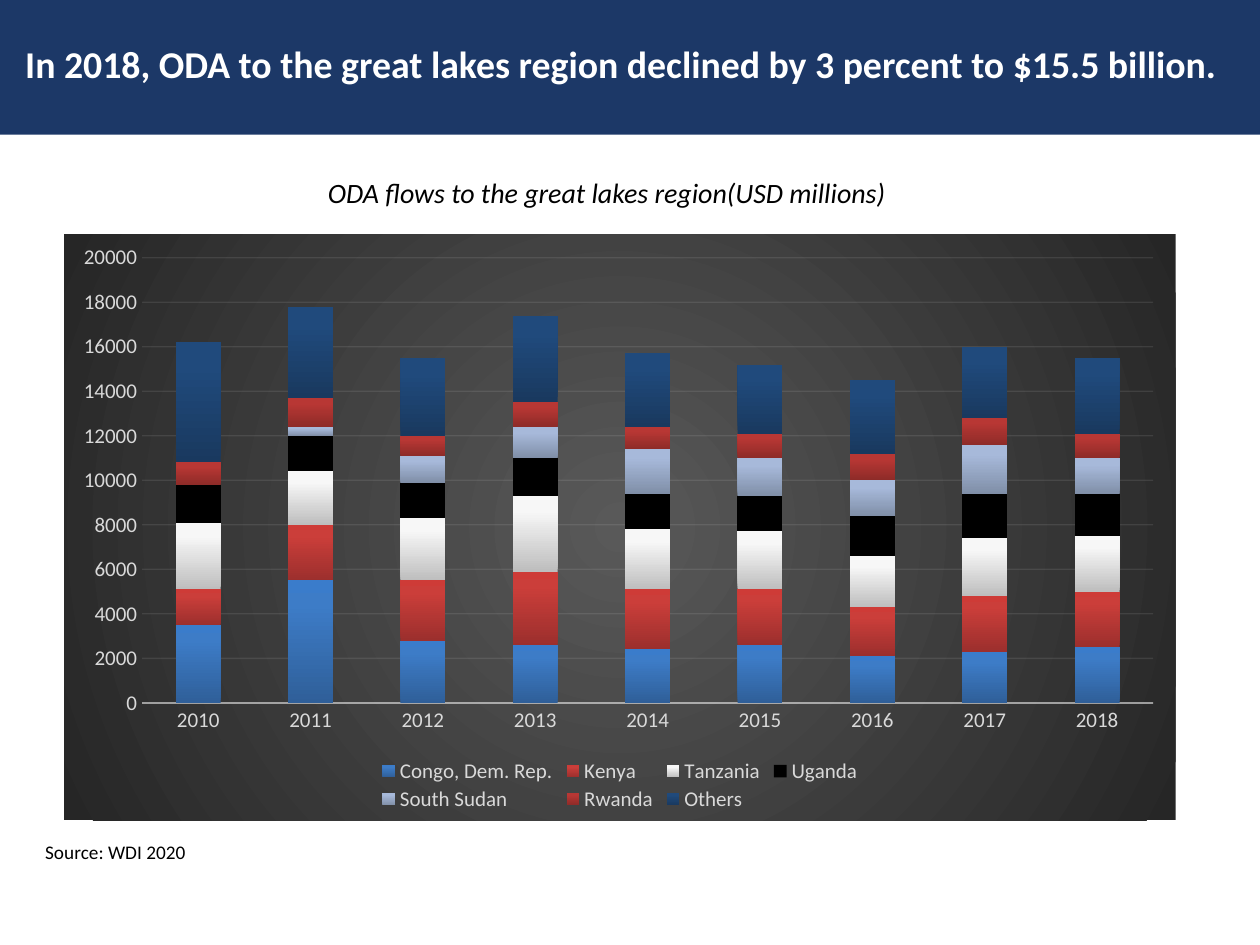
from dataclasses import dataclass, field
from typing import Any

from lxml import etree
from pptx import Presentation, util as u
from pptx.chart import data as chart_data
from pptx.dml.color import RGBColor
from pptx.enum import chart as ch, shapes, text
from pptx.oxml import ns, parse_xml

COLORS = {
    "banner": "1C3867", "white": "FFFFFF", "black": "000000",
    "label": "D9D9D9", "rule": "F2F2F2", "glow": "595959", "edge": "262626",
}
FONT = "Calibri"
YEARS = [str(year) for year in range(2010, 2019)]


@dataclass
class Label:
    words: str
    area: tuple[float, float, float, float]
    color: str
    font: dict[str, Any]
    inset: tuple[float, float] = (0, 0)
    anchor: text.MSO_ANCHOR = text.MSO_ANCHOR.MIDDLE
    para: dict[str, Any] = field(default_factory=dict)


@dataclass
class Country:
    name: str
    flows: list[int]
    shades: list[str]  # bottom, four fifths up, top


LABELS = [
    Label("In 2018, ODA to the great lakes region declined by 3 percent to $15.5 billion.",
          (14.4, 12.24, 691.92, 48.24), "white", {"size": u.Pt(21.6), "bold": True},
          para={"space_after": u.Pt(6)}),
    Label("Source: WDI 2020", (18.72, 476.64, 658.8, 33.84), "black", {"size": u.Pt(11)},
          inset=(7.2, 3.6), anchor=text.MSO_ANCHOR.TOP),
    Label("ODA flows to the great lakes region(USD millions) ",
          (67.68, 96.48, 561.6, 26.64), "black", {"size": u.Pt(16), "italic": True},
          inset=(3.6, 3.6), para={"alignment": text.PP_ALIGN.CENTER}),
]
COUNTRIES = [
    Country("Congo, Dem. Rep.", [3500, 5500, 2800, 2600, 2400, 2600, 2100, 2300, 2500],
            ["2F5F99", "3D7CC7", "3A7CCB"]),
    Country("Kenya", [1600, 2500, 2700, 3300, 2700, 2500, 2200, 2500, 2500],
            ["9C2F2D", "CB3E3A", "CE3B37"]),
    Country("Tanzania", [3000, 2400, 2800, 3400, 2700, 2600, 2300, 2600, 2500],
            ["BEBEBE", "F7F7F7", "F8F8F8"]),
    Country("Uganda", [1700, 1600, 1600, 1700, 1600, 1600, 1800, 2000, 1900],
            [COLORS["black"]]),
    Country("South Sudan", [0, 400, 1200, 1400, 2000, 1700, 1600, 2200, 1600],
            ["808FA8", "A7B9DA", "A6BADC"]),
    Country("Rwanda", [1000, 1300, 900, 1100, 1000, 1100, 1200, 1200, 1100],
            ["8E2B28", "B83734", "BB3531"]),
    Country("Others", [5400, 4100, 3500, 3900, 3300, 3100, 3300, 3200, 3400],
            ["19395F", "204A7C", "1E4A7E"]),
]


def rgb(name: str) -> RGBColor:
    return RGBColor.from_string(COLORS[name])


def apply(target: Any, values: dict[str, Any]) -> None:
    for name, value in values.items():
        setattr(target, name, value)


def style_font(font: Any, color: str, values: dict[str, Any]) -> None:
    apply(font, {"name": FONT, **values})
    font.color.rgb = rgb(color)


def gradient(stops: list[tuple[int, str]], direction: str) -> etree._Element:
    marks = "".join(f'<a:gs pos="{pos * 1000}"><a:srgbClr val="{color}"/></a:gs>'
                    for pos, color in stops)
    return parse_xml(f'<a:gradFill {ns.nsdecls("a")} rotWithShape="1">'
                     f'<a:gsLst>{marks}</a:gsLst>{direction}</a:gradFill>')


def style_line(line: Any, properties: etree._Element, width: float, opacity: int) -> None:
    line.width = u.Pt(width)
    line.color.rgb = rgb("rule")
    for color in properties.iter(ns.qn("a:srgbClr")):
        etree.SubElement(color, ns.qn("a:alpha"), val=str(opacity * 1000))


def place(parent: etree._Element, index: int, inner: bool, **fractions: float) -> None:
    """Fix a chart part at fractions of the chart area."""
    for old in parent.findall(ns.qn("c:layout")):
        parent.remove(old)
    values = {"xMode": "edge", "yMode": "edge", **fractions}
    if inner:
        values = {"layoutTarget": "inner", **values}
    layout = etree.Element(ns.qn("c:layout"))
    manual = etree.SubElement(layout, ns.qn("c:manualLayout"))
    for name, value in values.items():
        etree.SubElement(manual, ns.qn(f"c:{name}"), val=str(value))
    parent.insert(index, layout)


def add_banner(page: Any) -> None:
    banner = page.shapes.add_shape(shapes.MSO_SHAPE.RECTANGLE, 0, 0, u.Pt(720), u.Pt(77.04))
    banner.shadow.inherit = False
    banner.fill.solid()
    banner.fill.fore_color.rgb = rgb("banner")
    banner.line.fill.background()


def add_label(page: Any, label: Label) -> None:
    box = page.shapes.add_textbox(*map(u.Pt, label.area))
    side, end = map(u.Pt, label.inset)
    apply(box.text_frame, {
        "word_wrap": True, "vertical_anchor": label.anchor,
        "margin_left": side, "margin_right": side, "margin_top": end, "margin_bottom": end,
    })
    para = box.text_frame.paragraphs[0]
    apply(para, label.para)
    span = para.add_run()
    span.text = label.words
    style_font(span.font, label.color, label.font)


def style_axes(chart: Any) -> None:
    years, flows = chart.category_axis, chart.value_axis
    for axis in (years, flows):
        apply(axis, {"major_tick_mark": ch.XL_TICK_MARK.NONE,
                     "minor_tick_mark": ch.XL_TICK_MARK.NONE})
        style_font(axis.tick_labels.font, "label", {"size": u.Pt(12)})
    apply(flows, {"minimum_scale": 0, "maximum_scale": 20000, "major_unit": 2000})
    apply(flows.tick_labels, {"number_format": "0", "number_format_is_linked": False})
    flows.format.line.fill.background()
    axis_line, grid_line = years.format.line, flows.major_gridlines.format.line
    style_line(axis_line, years._element.find(ns.qn("c:spPr")), 1, 54)
    style_line(grid_line, flows._element.find(ns.qn("c:majorGridlines")), 0.75, 10)


def add_flows_chart(page: Any) -> None:
    data = chart_data.CategoryChartData()
    data.categories = YEARS
    for country in COUNTRIES:
        data.add_series(country.name, country.flows)
    area = map(u.Pt, (36.72, 133.92, 635.04, 334.8))
    chart = page.shapes.add_chart(ch.XL_CHART_TYPE.COLUMN_STACKED, *area, data).chart
    apply(chart, {"has_title": False, "has_legend": True})
    style_font(chart.font, "black", {"size": u.Pt(10)})
    style_axes(chart)

    plot = chart.plots[0]
    apply(plot, {"gap_width": 150, "overlap": 100, "vary_by_categories": False})
    for series, country in zip(plot.series, COUNTRIES):
        if len(country.shades) == 1:
            series.format.fill.solid()
            series.format.fill.fore_color.rgb = RGBColor.from_string(country.shades[0])
        else:
            stops = list(zip((0, 80, 100), country.shades))
            series._element.get_or_add_spPr().insert(
                0, gradient(stops, '<a:lin ang="16200000" scaled="0"/>'))

    legend = chart.legend
    apply(legend, {"position": ch.XL_LEGEND_POSITION.BOTTOM, "include_in_layout": False})
    style_font(legend.font, "label", {"size": u.Pt(12)})
    place(legend._element, 1, False, x=0.28, y=0.89, w=0.44, h=0.1)

    chart_part = chart._chartSpace.find(ns.qn("c:chart"))
    place(chart_part.find(ns.qn("c:plotArea")), 0, True, x=0.07, y=0.04, w=0.91, h=0.76)
    backdrop = etree.Element(ns.qn("c:spPr"))
    backdrop.append(gradient(
        [(0, COLORS["glow"]), (100, COLORS["edge"])],
        '<a:path path="circle"><a:fillToRect l="50000" t="50000" r="50000" b="50000"/></a:path>'))
    border = etree.SubElement(backdrop, ns.qn("a:ln"))
    etree.SubElement(border, ns.qn("a:noFill"))
    chart_part.addnext(backdrop)


def main() -> None:
    deck = Presentation()
    apply(deck, {"slide_width": u.Pt(720), "slide_height": u.Pt(540)})
    page = deck.slides.add_slide(deck.slide_layouts[6])
    add_banner(page)
    for label in LABELS:
        add_label(page, label)
    add_flows_chart(page)
    deck.save("out.pptx")


if __name__ == "__main__":
    main()
